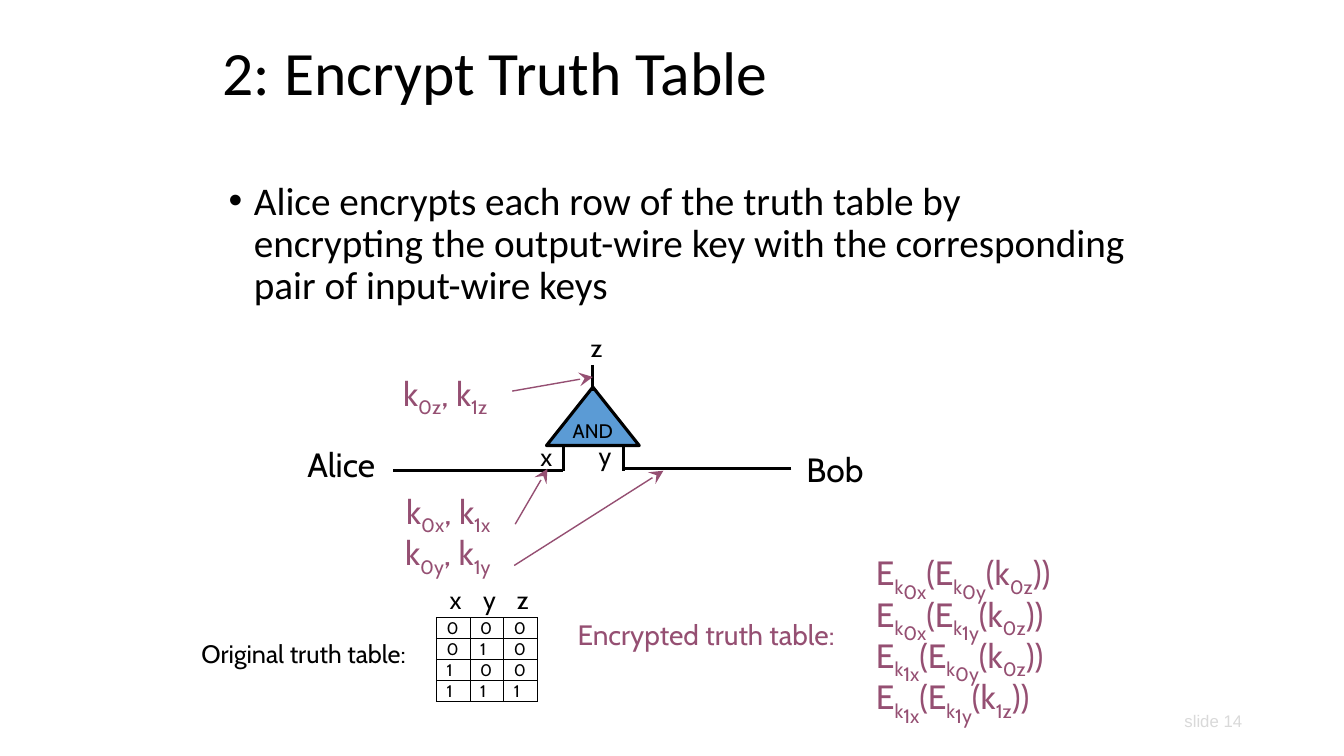
import pptx
import pptx.util
import pptx.dml.color
import pptx.enum.dml
import pptx.enum.shapes
import pptx.enum.text
import pptx.oxml.ns
from lxml import etree

RGB = pptx.dml.color.RGBColor
BLACK = RGB(0x00, 0x00, 0x00)
BLUE = RGB(0x5B, 0x9B, 0xD5)
PLUM = RGB(0x95, 0x4F, 0x72)
PALE = RGB(0xD9, 0xD9, 0xD9)
ALIGN = pptx.enum.text.PP_ALIGN
ANCHOR = pptx.enum.text.MSO_ANCHOR
SHAPE = pptx.enum.shapes.MSO_SHAPE
W, H = 13.33, 7.5

TITLE = "2: Encrypt Truth Table"
BULLET = ("Alice encrypts each row of the truth table by encrypting the "
          "output-wire key with the corresponding pair of input-wire keys")
LABELS = [
    ("x", 5.26, 4.33, 0.32, 0.4, 18, BLACK),
    ("y", 5.84, 4.32, 0.33, 0.4, 18, BLACK),
    ("z", 5.76, 3.25, 0.31, 0.4, 18, BLACK),
    ("Alice", 2.95, 4.35, 0.88, 0.5, 24, BLACK),
    ("Bob", 7.9, 4.4, 0.77, 0.5, 24, BLACK),
    ("Original truth table:", 1.9, 6.28, 2.37, 0.4, 18, BLACK),
    ("Encrypted truth table:", 5.63, 6.08, 2.9, 0.43, 20, PLUM),
]
WIRE_KEYS = [("z", 3.9, 3.65, 1.18), ("x", 3.93, 4.82, 1.2), ("y", 3.92, 5.23, 1.2)]
WIRES = [
    (5.59, 4.42, 5.59, 4.67), (6.18, 4.42, 6.18, 4.67), (5.88, 3.62, 5.88, 3.88),
    (5.58, 4.67, 3.9, 4.67), (7.85, 4.65, 6.17, 4.65),
]
ARROWS = [(5.08, 3.88, 5.88, 3.74), (5.11, 5.2, 5.43, 4.65), (5.1, 5.61, 6.58, 4.67)]
TRUTH = [(x, y, x & y) for x in (0, 1) for y in (0, 1)]
HEADS = [("x", 0.32), ("y", 0.33), ("z", 0.31)]
TABLE_X, TABLE_Y, COL, ROW = 4.33, 6.13, 1 / 3, 0.83 / 4
CIPHER_X, CIPHER_Y, CIPHER_STEP = 8.59, 5.43, 0.41

prs = pptx.Presentation()
prs.slide_width, prs.slide_height = pptx.util.Inches(W), pptx.util.Inches(H)
s = prs.slides.add_slide(prs.slide_layouts[6])


def inches(*values):
    return [pptx.util.Inches(v) for v in values]


def write(tf, text, size=24, color=BLACK, font="Cabin", align=ALIGN.LEFT,
          anchor=ANCHOR.TOP, wrap=False, spacing=None):
    tf.word_wrap = wrap
    tf.vertical_anchor = anchor
    p = tf.paragraphs[0]
    p.alignment = align
    p.line_spacing = spacing
    for part, base in ([(text, 0)] if isinstance(text, str) else text):
        r = p.add_run()
        r.text = part
        r.font.size, r.font.name = pptx.util.Pt(size), font
        r.font.color.rgb = color
        if base:
            r._r.get_or_add_rPr().set("baseline", str(base * 1000))
    return p


def label(text, x, y, w, h, **fmt):
    tf = s.shapes.add_textbox(*inches(x, y, w, h)).text_frame
    p = write(tf, text, **fmt)
    if not tf.word_wrap:
        tf.auto_size = pptx.enum.text.MSO_AUTO_SIZE.SHAPE_TO_FIT_TEXT
    return p


def line(ends, color, width, arrow=False):
    c = s.shapes.add_connector(pptx.enum.shapes.MSO_CONNECTOR.STRAIGHT, *inches(*ends))
    c.line.color.rgb, c.line.width = color, pptx.util.Pt(width)
    if arrow:
        etree.SubElement(c.line._get_or_add_ln(), pptx.oxml.ns.qn("a:tailEnd"),
                         type="stealth", w="lg", len="lg")
    etree.SubElement(c._element.spPr, pptx.oxml.ns.qn("a:effectLst"))


def border(cell):
    props = cell._tc.get_or_add_tcPr()
    for i, side in enumerate(("lnL", "lnR", "lnT", "lnB")):
        ln = etree.Element(pptx.oxml.ns.qn("a:" + side), w="12700")
        fill = etree.SubElement(ln, pptx.oxml.ns.qn("a:solidFill"))
        etree.SubElement(fill, pptx.oxml.ns.qn("a:srgbClr"), val=str(BLACK))
        props.insert(i, ln)


label(TITLE, 2.11, 0.25, 9.22, 1, size=44, font="Calibri", anchor=ANCHOR.MIDDLE,
      wrap=True, spacing=0.9)
p = label(BULLET, 2.17, 1.75, 9.17, 1.5, size=28, font="Calibri", wrap=True, spacing=0.9)
p.space_before = pptx.util.Pt(10)
props = p._p.get_or_add_pPr()
props.set("marL", "228600")
props.set("indent", "-228600")
etree.SubElement(props, pptx.oxml.ns.qn("a:buFont"), typeface="Arial")
etree.SubElement(props, pptx.oxml.ns.qn("a:buChar"), char="•")

gate = s.shapes.add_shape(SHAPE.ISOSCELES_TRIANGLE, *inches(5.42, 3.84, 0.92, 0.58))
gate.shadow.inherit = False
gate.fill.solid()
gate.fill.fore_color.rgb = BLUE
gate.line.color.rgb, gate.line.width = BLACK, pptx.util.Pt(2.25)
write(gate.text_frame, "AND", size=14, align=ALIGN.CENTER, anchor=ANCHOR.MIDDLE)

for ends in WIRES:
    line(ends, BLACK, 2.25)
for ends in ARROWS:
    line(ends, PLUM, 1, arrow=True)
for text, x, y, w, h, size, color in LABELS:
    label(text, x, y, w, h, size=size, color=color)
for wire, x, y, w in WIRE_KEYS:
    keys = [("k", 0), ("0" + wire, -25), (", k", 0), ("1" + wire, -25)]
    label(keys, x, y, w, 0.5, color=PLUM)

frame = s.shapes.add_table(4, 3, *inches(TABLE_X, TABLE_Y, 3 * COL, 4 * ROW))
table = frame.table
table.first_row = table.horz_banding = False
for i, (head, w) in enumerate(HEADS):
    table.columns[i].width = pptx.util.Inches(COL)
    label(head, TABLE_X + 0.03 + i * COL, 5.75, w, 0.4, size=18)
for i, bits in enumerate(TRUTH):
    table.rows[i].height = pptx.util.Inches(ROW)
    for j, bit in enumerate(bits):
        cell = table.cell(i, j)
        cell.margin_left, cell.margin_right, cell.margin_top, cell.margin_bottom = inches(0.1, 0, 0, 0)
        cell.vertical_anchor = ANCHOR.MIDDLE
        cell.fill.background()
        border(cell)
        write(cell.text_frame, str(bit), size=12, anchor=ANCHOR.MIDDLE, wrap=True)

for i, (x, y, z) in enumerate(TRUTH):
    cipher = [("E", 0), ("k", -25), (f"{x}x", -40), ("(E", 0), ("k", -25),
              (f"{y}y", -40), ("(k", 0), (f"{z}z", -25), ("))", 0)]
    label(cipher, CIPHER_X, CIPHER_Y + i * CIPHER_STEP, 2.16, 0.5, color=PLUM)

label("slide 14", 10.42, 7, 2, 0.3, size=12, color=PALE, font="Arial",
      align=ALIGN.RIGHT, wrap=True)

prs.save("out.pptx")
